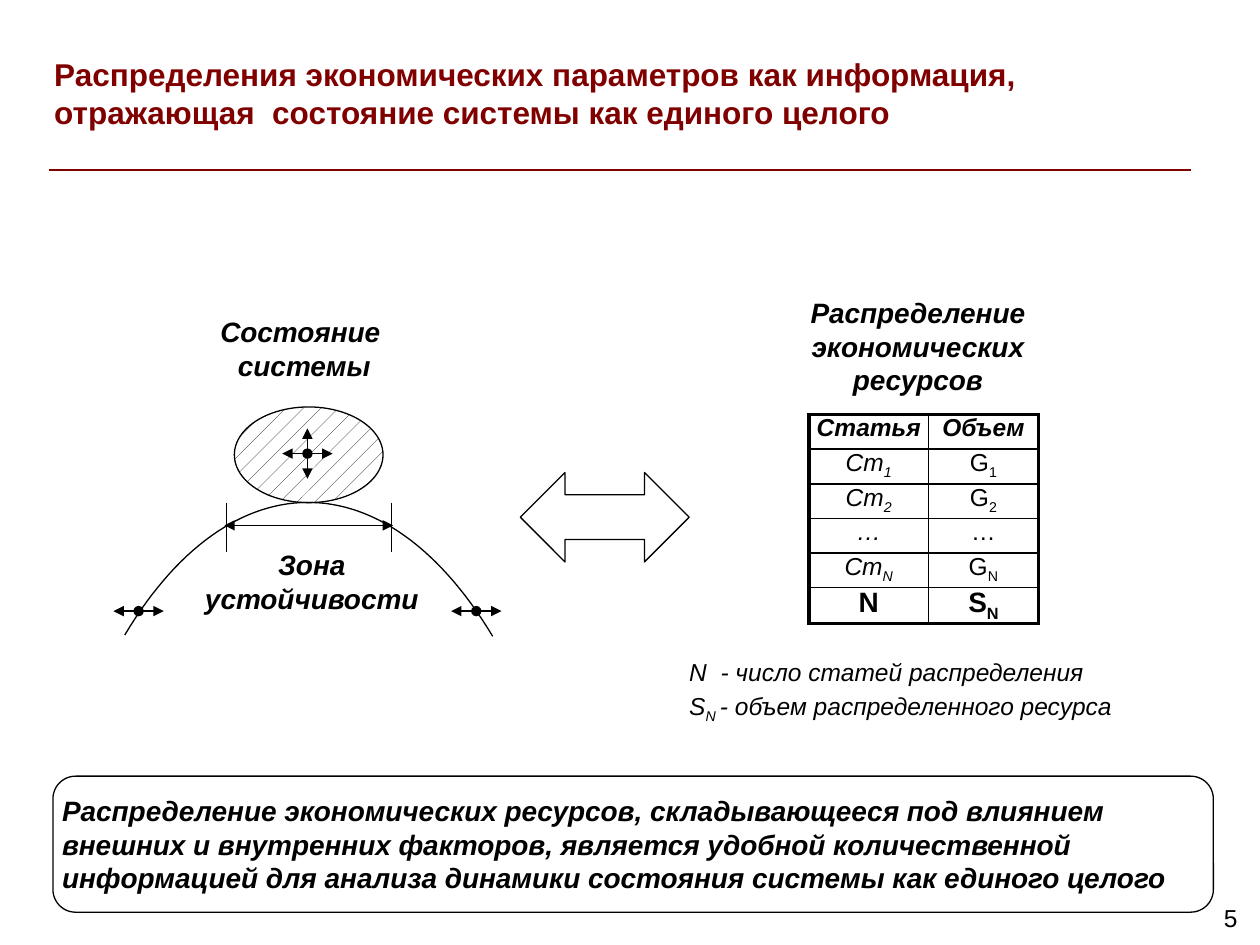
from math import cos, sin, pi
from lxml.etree import SubElement
from pptx import Presentation
from pptx.dml.color import RGBColor
from pptx.enum.dml import MSO_PATTERN
from pptx.enum.shapes import MSO_CONNECTOR, MSO_SHAPE
from pptx.enum.text import MSO_ANCHOR, MSO_AUTO_SIZE, PP_ALIGN
from pptx.oxml.ns import qn
from pptx.util import Inches, Pt

THEME = {
    "font": "Arial",
    "ink": RGBColor(0, 0, 0),
    "accent": RGBColor(128, 0, 0),
    "paper": RGBColor(255, 255, 255),
    "title": 18,
    "label": 16,
    "small": 14,
    "thin": 0.75,
    "rule": 1.5,
    "inner": 1,
    "outer": 2.25,
}

presentation = Presentation()
presentation.slide_width = Inches(10)
presentation.slide_height = Inches(7.5)
column = presentation.slide_width / 100
row = presentation.slide_height / 75
slide = presentation.slides.add_slide(presentation.slide_layouts[5])
shapes = slide.shapes


def write(text_frame, lines, size, bold=False, italic=False, color="ink",
          align=PP_ALIGN.LEFT, anchor=MSO_ANCHOR.MIDDLE, insets=(0, 0, 0, 0), gap=0):
    text_frame.word_wrap = True
    text_frame.auto_size = MSO_AUTO_SIZE.NONE
    text_frame.vertical_anchor = anchor
    (text_frame.margin_left, text_frame.margin_top,
     text_frame.margin_right, text_frame.margin_bottom) = map(Inches, insets)
    for index, line in enumerate(lines):
        paragraph = text_frame.add_paragraph() if index else text_frame.paragraphs[0]
        paragraph.alignment = align
        paragraph.space_before = Pt(gap if index else 0)
        for part, text in enumerate(line.split("_")):
            run = paragraph.add_run()
            run.text = text
            run.font.name = THEME["font"]
            run.font.size = Pt(size)
            run.font.bold = bold
            run.font.italic = italic
            run.font.color.rgb = THEME[color]
            if part % 2:
                run.font._element.set("baseline", "-25000")


def draw_line(canvas, x1, y1, x2, y2, head=None, tail=None, color="ink", width="thin"):
    connector = canvas.add_connector(
        MSO_CONNECTOR.STRAIGHT, int(x1 * column), int(y1 * row), int(x2 * column), int(y2 * row))
    connector.line.color.rgb = THEME[color]
    connector.line.width = Pt(THEME[width])
    properties = connector._element.spPr
    outline = properties.find(qn("a:ln"))
    for tag, kind in (("a:headEnd", head), ("a:tailEnd", tail)):
        if kind:
            SubElement(outline, qn(tag), type=kind)
    SubElement(properties, qn("a:effectLst"))


title = shapes.title
title.left, title.top = int(3.9 * column), int(3.9 * row)
title.width, title.height = int(82.7 * column), int(9.4 * row)
write(title.text_frame,
      ["Распределения экономических параметров как информация, "
       "отражающая  состояние системы как единого целого"],
      THEME["title"], bold=True, color="accent", anchor=MSO_ANCHOR.TOP,
      insets=(0.04, 0.05, 0.02, 0.05))
draw_line(shapes, 3.9, 13.5, 94.5, 13.5, color="accent", width="rule")

outlines = {}
for name, kind, left, top, width, height in (
    ("conclusion", MSO_SHAPE.ROUNDED_RECTANGLE, 4.2, 61.6, 92.1, 10.8),
    ("state", MSO_SHAPE.OVAL, 18.6, 32.3, 11.8, 7.6),
    ("link", MSO_SHAPE.LEFT_RIGHT_ARROW, 41.3, 37.5, 13.4, 7.1),
):
    outlines[name] = shapes.add_shape(
        kind, int(left * column), int(top * row), int(width * column), int(height * row))

start, first_control, second_control, end = (9.9, 50.4), (18.2, 36.5), (30.5, 36.2), (39.1, 50.5)
steps = 60
curve = []
for step in range(steps + 1):
    t = step / steps
    weights = ((1 - t) ** 3, 3 * t * (1 - t) ** 2, 3 * t ** 2 * (1 - t), t ** 3)
    controls = zip(start, first_control, second_control, end)
    x, y = (sum(w * c for w, c in zip(weights, axis))
            for axis in zip(start, first_control, second_control, end))
    curve.append((int(x * column), int(y * row)))
builder = shapes.build_freeform(*curve[0])
builder.add_line_segments(curve[1:], close=False)
outlines["hill"] = builder.convert_to_shape()

for shape in outlines.values():
    shape.shadow.inherit = False
    shape.fill.background()
    shape.line.color.rgb = THEME["ink"]
    shape.line.width = Pt(THEME["thin"])
state_fill = outlines["state"].fill
state_fill.patterned()
state_fill.pattern = MSO_PATTERN.PERCENT_5
state_fill.fore_color.rgb = THEME["ink"]
state_fill.back_color.rgb = THEME["paper"]
write(outlines["conclusion"].text_frame,
      ["Распределение экономических ресурсов, складывающееся под влиянием "
       "внешних и внутренних факторов, является удобной количественной "
       "информацией для анализа динамики состояния системы как единого целого"],
      THEME["label"], bold=True, italic=True, insets=(0.02, 0.05, 0.02, 0.05))

for lines, left, top, width, height in (
    (["Распределение экономических ресурсов"], 63.8, 23.4, 18.1, 8.1),
    (["Состояние ", "системы"], 15.5, 23.7, 17.3, 7.9),
    (["Зона устойчивости "], 16.1, 42.2, 17.3, 7.9),
):
    label = shapes.add_textbox(
        int(left * column), int(top * row), int(width * column), int(height * row))
    write(label.text_frame, lines, THEME["label"], bold=True, italic=True, align=PP_ALIGN.CENTER)

notes = shapes.add_textbox(int(54.7 * column), int(52.3 * row), int(36.2 * column), int(5 * row))
write(notes.text_frame,
      ["N  - число статей распределения", "S_N _- объем распределенного ресурса"],
      THEME["small"], italic=True, gap=2.5)
page_number = shapes.add_textbox(
    int(88.8 * column), int(71.2 * row), int(10.4 * column), int(3.8 * row))
write(page_number.text_frame, ["5"], THEME["small"], align=PP_ALIGN.RIGHT,
      anchor=MSO_ANCHOR.TOP, insets=(0.1, 0.05, 0.1, 0.05))

for x in (18, 31.1):
    draw_line(shapes, x, 39.9, x, 43.8)
draw_line(shapes, 17.8, 41.7, 31.2, 41.7, head="triangle", tail="triangle")

reach = 2
for x, y, directions in ((24.4, 36, 4), (37.8, 48.5, 2), (11, 48.5, 2)):
    group = shapes.add_group_shape()
    for direction in range(directions):
        angle = 2 * pi * direction / directions
        draw_line(group.shapes, x, y, x + reach * cos(angle), y + reach * sin(angle),
                  head=None if direction else "oval", tail="triangle")

entries = [("Статья", "Объем"), ("Ст_1", "G_1"), ("Ст_2", "G_2"),
           ("…", "…"), ("Ст_N", "G_N"), ("N", "S_N")]
last = len(entries) - 1
table = shapes.add_table(len(entries), 2, int(64.2 * column), int(32.9 * row),
                         int(18.2 * column), int(16.5 * row)).table
table.first_row = table.horz_banding = False
for table_column, width in zip(table.columns, (9.5, 8.7)):
    table_column.width = int(width * column)
for r, entry in enumerate(entries):
    table.rows[r].height = int(2.75 * row)
    for c, text in enumerate(entry):
        cell = table.cell(r, c)
        write(cell.text_frame, [text], THEME["label" if r == last else "small"],
              bold=r in (0, last), italic=r == 0 or (c == 0 and r < last),
              align=PP_ALIGN.CENTER)
        cell.vertical_anchor = MSO_ANCHOR.TOP
        cell.margin_left = cell.margin_right = cell.margin_top = cell.margin_bottom = 0
        properties = cell._tc.get_or_add_tcPr()
        for tag, is_outer in (("a:lnL", c == 0), ("a:lnR", c == 1),
                              ("a:lnT", r == 0), ("a:lnB", r == last)):
            border = SubElement(properties, qn(tag),
                                w=str(Pt(THEME["outer" if is_outer else "inner"])))
            SubElement(SubElement(border, qn("a:solidFill")), qn("a:srgbClr"),
                       val=str(THEME["ink"]))
        cell.fill.solid()
        cell.fill.fore_color.rgb = THEME["paper"]

presentation.save("out.pptx")
